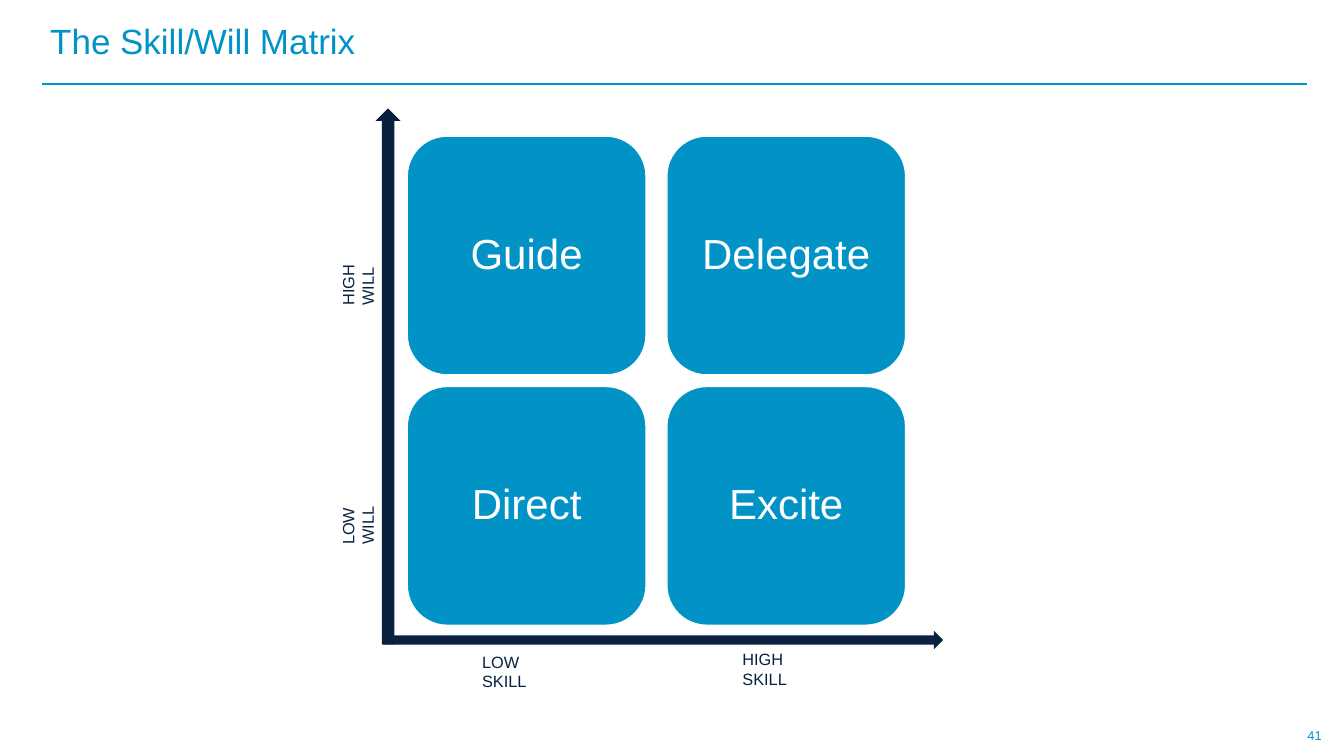
"""Build the Skill/Will matrix slide."""
import pptx
import pptx.dml.color
import pptx.enum.shapes
import pptx.enum.text
import pptx.oxml.ns
import pptx.util
from lxml import etree

Pt = pptx.util.Pt
RGBColor = pptx.dml.color.RGBColor
Shape = pptx.enum.shapes.MSO_SHAPE
Align = pptx.enum.text.PP_ALIGN
Anchor = pptx.enum.text.MSO_ANCHOR

BLUE = RGBColor(0x01, 0x93, 0xC7)
TILE_BLUE = RGBColor(0x01, 0x92, 0xC6)
RULE_BLUE = RGBColor(0x00, 0x93, 0xC7)
NAVY = RGBColor(0x09, 0x21, 0x3F)
WHITE = RGBColor(0xFF, 0xFF, 0xFF)


class MatrixSlide:
    """Hold the style and the current slide, and draw its elements."""

    font = "Arial"

    def __init__(self, page):
        """Keep the slide to draw on."""
        self.page = page

    def add_words(self, shape, text, size, color, align=Align.LEFT, anchor=Anchor.TOP, spacing=1.0):
        """Put one styled run into a shape."""
        frame = shape.text_frame
        frame.word_wrap = True
        frame.vertical_anchor = anchor
        para = frame.paragraphs[0]
        para.alignment = align
        para.line_spacing = spacing
        span = para.add_run()
        span.text = text
        span.font.name = self.font
        span.font.size = Pt(size)
        span.font.color.rgb = color

    def add_label(self, left, top, width, height, text, size, color, rotation=0, **layout):
        """Add a text box."""
        box = self.page.shapes.add_textbox(Pt(left), Pt(top), Pt(width), Pt(height))
        box.rotation = rotation
        self.add_words(box, text, size, color, **layout)

    def add_filled(self, kind, left, top, width, height, fill):
        """Add a filled shape without outline or shadow."""
        shape = self.page.shapes.add_shape(kind, Pt(left), Pt(top), Pt(width), Pt(height))
        shape.shadow.inherit = False
        shape.fill.solid()
        shape.fill.fore_color.rgb = fill
        shape.line.fill.background()
        return shape

    def add_tile(self, left, top, side, text):
        """Add a rounded quadrant with its name."""
        tile = self.add_filled(Shape.ROUNDED_RECTANGLE, left, top, side, side, TILE_BLUE)
        tile.line.color.rgb = WHITE
        tile.line.width = Pt(1)
        self.add_words(tile, text, 36, WHITE, Align.CENTER, Anchor.MIDDLE, 0.9)

    def add_axis(self, left, top, width, height, rotation=0):
        """Add an axis arrow."""
        self.add_filled(Shape.RIGHT_ARROW, left, top, width, height, NAVY).rotation = rotation

    def add_rule(self, left, right, top):
        """Add the horizontal line under the title."""
        rule = self.page.shapes.add_connector(
            pptx.enum.shapes.MSO_CONNECTOR.STRAIGHT, Pt(left), Pt(top), Pt(right), Pt(top))
        rule.line.color.rgb = RULE_BLUE
        rule.line.width = Pt(1.5)
        etree.SubElement(rule._element.spPr, pptx.oxml.ns.qn("a:effectLst"))


def main():
    """Draw the slide and save the deck."""
    deck = pptx.Presentation()
    deck.slide_width, deck.slide_height = Pt(1152), Pt(648)
    slide = MatrixSlide(deck.slides.add_slide(deck.slide_layouts[6]))

    slide.add_rule(36, 1120.3, 72)
    slide.add_label(1101.6, 613.4, 50.4, 34.6, "41", 11, BLUE,
                    align=Align.CENTER, anchor=Anchor.MIDDLE)
    slide.add_label(36, 17.3, 880.6, 40.3, "The Skill/Will Matrix", 30, BLUE,
                    anchor=Anchor.MIDDLE, spacing=0.9)

    quadrants = [["Guide", "Delegate"], ["Direct", "Excite"]]
    for row, names in enumerate(quadrants):
        for column, name in enumerate(names):
            slide.add_tile(349.2 + 222.5 * column, 116.8 + 214.6 * row, 204.5, name)

    labels = [
        ("LOW WILL", 257.8, 421.2, 81.4, 270),
        ("HIGH WILL", 256.3, 214.6, 84.2, 270),
        ("LOW SKILL", 406.1, 555.1, 86.4, 0),
        ("HIGH SKILL", 629.3, 553, 89.3, 0),
    ]
    for text, left, top, width, rotation in labels:
        slide.add_label(left, top, width, 24.5, text, 14, NAVY, rotation)

    slide.add_axis(328.3, 540.7, 480.2, 15.8)
    slide.add_axis(103, 311.8, 459.4, 21.6, 270)

    deck.save("out.pptx")


if __name__ == "__main__":
    main()
